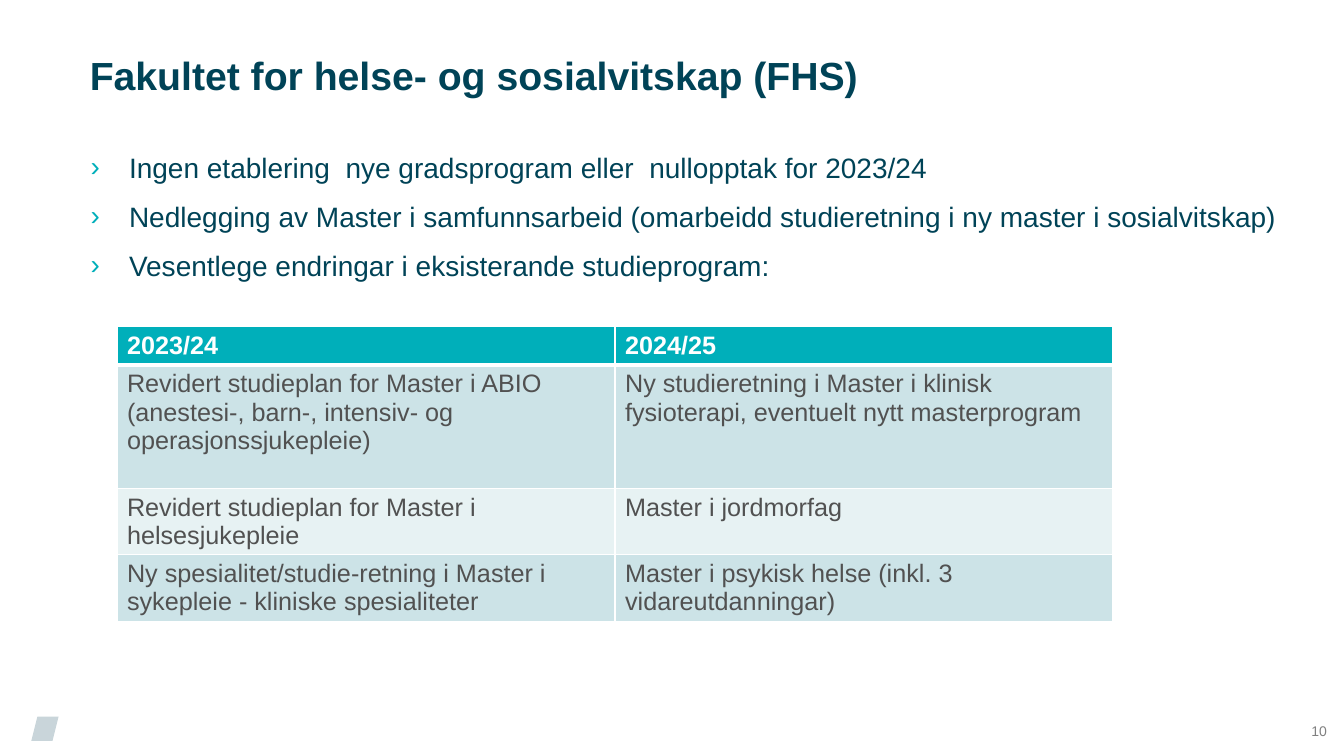
"""Build the slide on study programme changes at the faculty."""
from lxml import etree
from pptx import Presentation
from pptx import util as u
from pptx.dml.color import RGBColor
from pptx.enum import shapes, text
from pptx.oxml import ns

SLIDE_WIDTH = u.Inches(13.33)
SLIDE_HEIGHT = u.Inches(7.5)
FONT = "Arial"
NAVY = RGBColor(0x00, 0x43, 0x57)
TEAL = RGBColor(0x00, 0xAF, 0xBA)
WHITE = RGBColor(0xFF, 0xFF, 0xFF)
DARK_GREY = RGBColor(0x51, 0x51, 0x51)
GREY = RGBColor(0x80, 0x80, 0x80)
PALE_GREY = RGBColor(0xC9, 0xD5, 0xDA)
BANDS = (RGBColor(0xE7, 0xF2, 0xF3), RGBColor(0xCC, 0xE3, 0xE7))

TITLE = "Fakultet for helse- og sosialvitskap (FHS)"
POINTS = (
    "Ingen etablering  nye gradsprogram eller  nullopptak for 2023/24",
    "Nedlegging av Master i samfunnsarbeid (omarbeidd studieretning i ny master i sosialvitskap)",
    "Vesentlege endringar i eksisterande studieprogram:",
)
PROGRAMMES = (
    ("2023/24", "2024/25"),
    ("Revidert studieplan for Master i ABIO\n"
     "(anestesi-, barn-, intensiv- og operasjonssjukepleie)",
     "Ny studieretning i Master i klinisk fysioterapi, eventuelt nytt masterprogram"),
    ("Revidert studieplan for Master i helsesjukepleie", "Master i jordmorfag"),
    ("Ny spesialitet/studie-retning i Master i sykepleie - kliniske spesialiteter",
     "Master i psykisk helse (inkl. 3 vidareutdanningar)"),
)
ROW_SHARES = (4.93, 16.3, 8.8, 8.8)


def area(left, top, width, height):
    """Turn percentages of the slide's size into a left, top, width and height."""
    return (int(SLIDE_WIDTH * left / 100), int(SLIDE_HEIGHT * top / 100),
            int(SLIDE_WIDTH * width / 100), int(SLIDE_HEIGHT * height / 100))


def place(shape, box):
    """Move a shape to the given box."""
    shape.left, shape.top, shape.width, shape.height = box


def set_font(paragraph, size, color, bold=False):
    """Format all text of a paragraph."""
    font = paragraph.font
    font.name, font.size, font.bold = FONT, u.Pt(size), bold
    font.color.rgb = color


def set_frame(frame, anchor):
    """Give a text frame no margins, wrapping and a fixed size."""
    frame.margin_left = frame.margin_top = frame.margin_right = frame.margin_bottom = 0
    frame.word_wrap = True
    frame.auto_size = text.MSO_AUTO_SIZE.NONE
    frame.vertical_anchor = anchor


def add_bullet(paragraph):
    """Give a paragraph a hanging teal bullet."""
    properties = paragraph._p.get_or_add_pPr()
    indent = u.Inches(0.38)
    properties.set("marL", str(indent))
    properties.set("indent", str(-indent))
    color = etree.SubElement(properties, ns.qn("a:buClr"))
    etree.SubElement(color, ns.qn("a:srgbClr"), val=str(TEAL))
    etree.SubElement(properties, ns.qn("a:buFont"), typeface=FONT)
    etree.SubElement(properties, ns.qn("a:buChar"), char="›")


def fill_title(shape):
    """Write the slide title."""
    place(shape, area(6.68, 0, 89.65, 19.73))
    shape.text_frame.text = TITLE
    set_frame(shape.text_frame, text.MSO_ANCHOR.MIDDLE)
    paragraph = shape.text_frame.paragraphs[0]
    paragraph.alignment = text.PP_ALIGN.LEFT
    set_font(paragraph, 28, NAVY, True)


def fill_points(shape):
    """Write the bulleted list."""
    place(shape, area(6.75, 19.73, 89.65, 73.73))
    shape.text_frame.text = "\n".join(POINTS)
    set_frame(shape.text_frame, text.MSO_ANCHOR.TOP)
    for number, paragraph in enumerate(shape.text_frame.paragraphs):
        add_bullet(paragraph)
        paragraph.line_spacing = 1.04
        paragraph.space_before = u.Pt(10 if number else 0)
        set_font(paragraph, 20, NAVY)


def set_borders(cell, top, bottom):
    """Draw white cell borders, with the top and bottom widths in points."""
    properties = cell._tc.get_or_add_tcPr()
    for side, width in (("L", 1), ("R", 1), ("T", top), ("B", bottom)):
        line = etree.SubElement(properties, ns.qn(f"a:ln{side}"), w=str(u.Pt(width)))
        fill = etree.SubElement(line, ns.qn("a:solidFill"))
        etree.SubElement(fill, ns.qn("a:srgbClr"), val=str(WHITE))


def add_programme_table(slide):
    """Add the table of changes per academic year."""
    box = area(8.7, 43.2, 74.12, sum(ROW_SHARES))
    table = slide.shapes.add_table(len(PROGRAMMES), len(PROGRAMMES[0]), *box).table
    for row_number, (contents, share) in enumerate(zip(PROGRAMMES, ROW_SHARES)):
        table.rows[row_number].height = int(SLIDE_HEIGHT * share / 100)
        header = row_number == 0
        for column_number, content in enumerate(contents):
            cell = table.cell(row_number, column_number)
            cell.text = content
            set_borders(cell, 3 if row_number == 1 else 1, 3 if header else 1)
            cell.fill.solid()
            cell.fill.fore_color.rgb = TEAL if header else BANDS[row_number % 2]
            for paragraph in cell.text_frame.paragraphs:
                set_font(paragraph, 18, WHITE if header else DARK_GREY, header)


def add_slide_number(slide, number):
    """Add the slide number in the bottom right corner."""
    frame = slide.shapes.add_textbox(*area(96.32, 93.47, 3.68, 6.53)).text_frame
    frame.text = number
    set_frame(frame, text.MSO_ANCHOR.MIDDLE)
    frame.paragraphs[0].alignment = text.PP_ALIGN.CENTER
    set_font(frame.paragraphs[0], 10, GREY)


def add_corner_mark(slide):
    """Add a plain slanted mark in the bottom left corner."""
    mark = slide.shapes.add_shape(
        shapes.MSO_SHAPE.PARALLELOGRAM, *area(2.33, 94.8, 2.03, 3.2))
    mark.shadow.inherit = False
    mark.fill.solid()
    mark.fill.fore_color.rgb = PALE_GREY
    mark.line.fill.background()


def main():
    """Build and save the presentation."""
    presentation = Presentation()
    presentation.slide_width, presentation.slide_height = SLIDE_WIDTH, SLIDE_HEIGHT
    slide = presentation.slides.add_slide(presentation.slide_layouts[1])
    add_corner_mark(slide)
    fill_title(slide.shapes.title)
    fill_points(slide.placeholders[1])
    add_slide_number(slide, "10")
    add_programme_table(slide)
    presentation.save("out.pptx")


if __name__ == "__main__":
    main()
